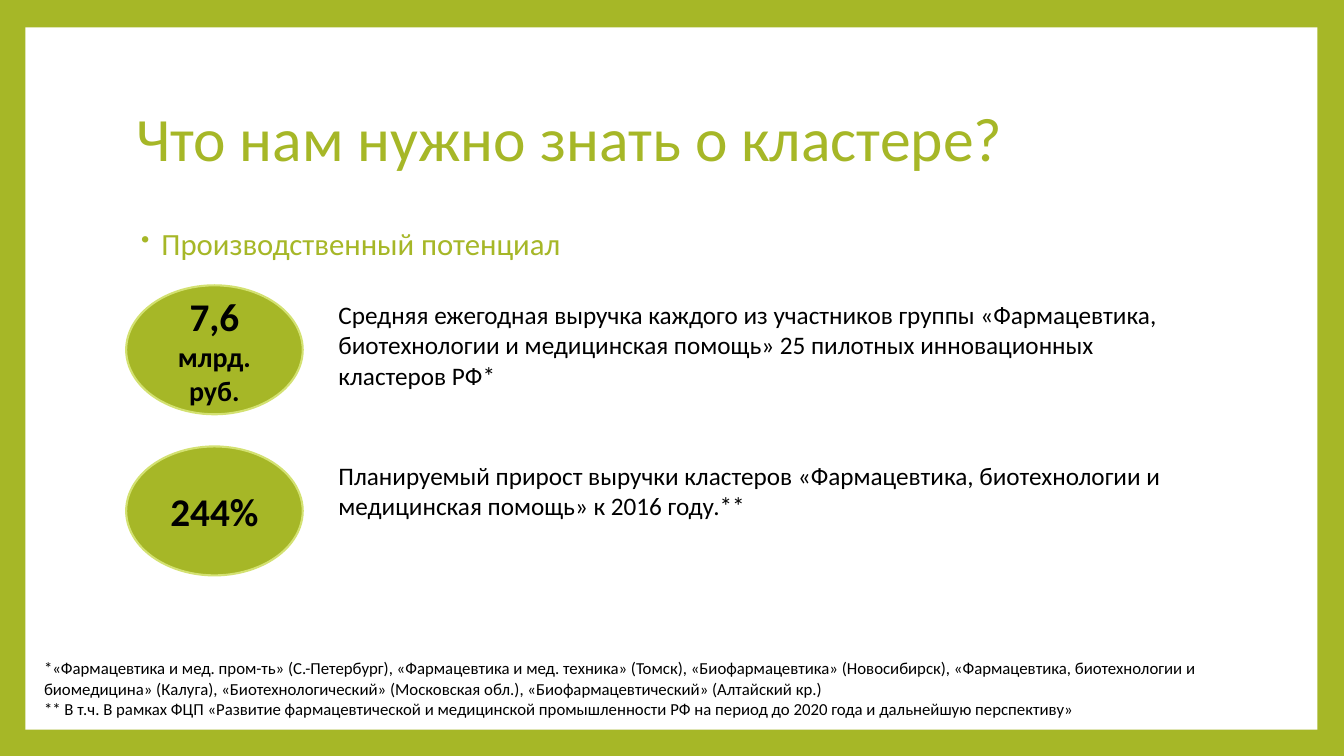
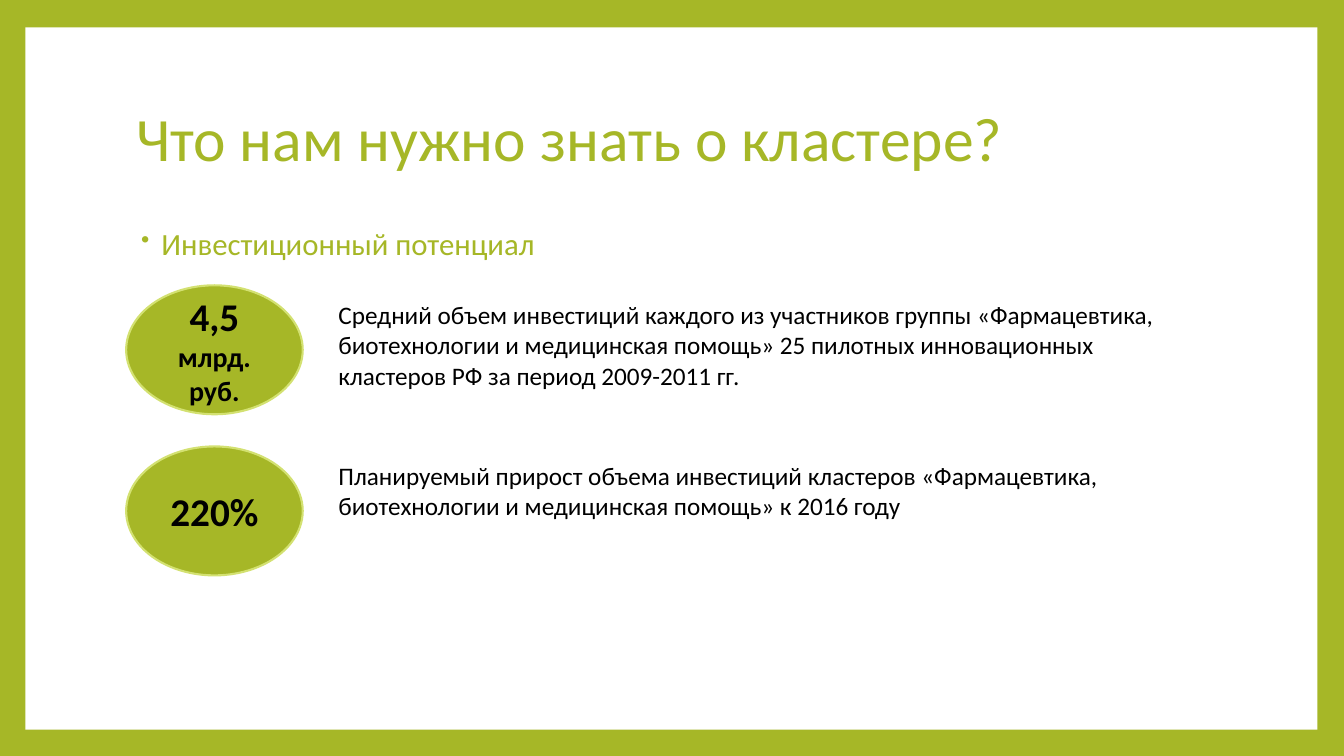
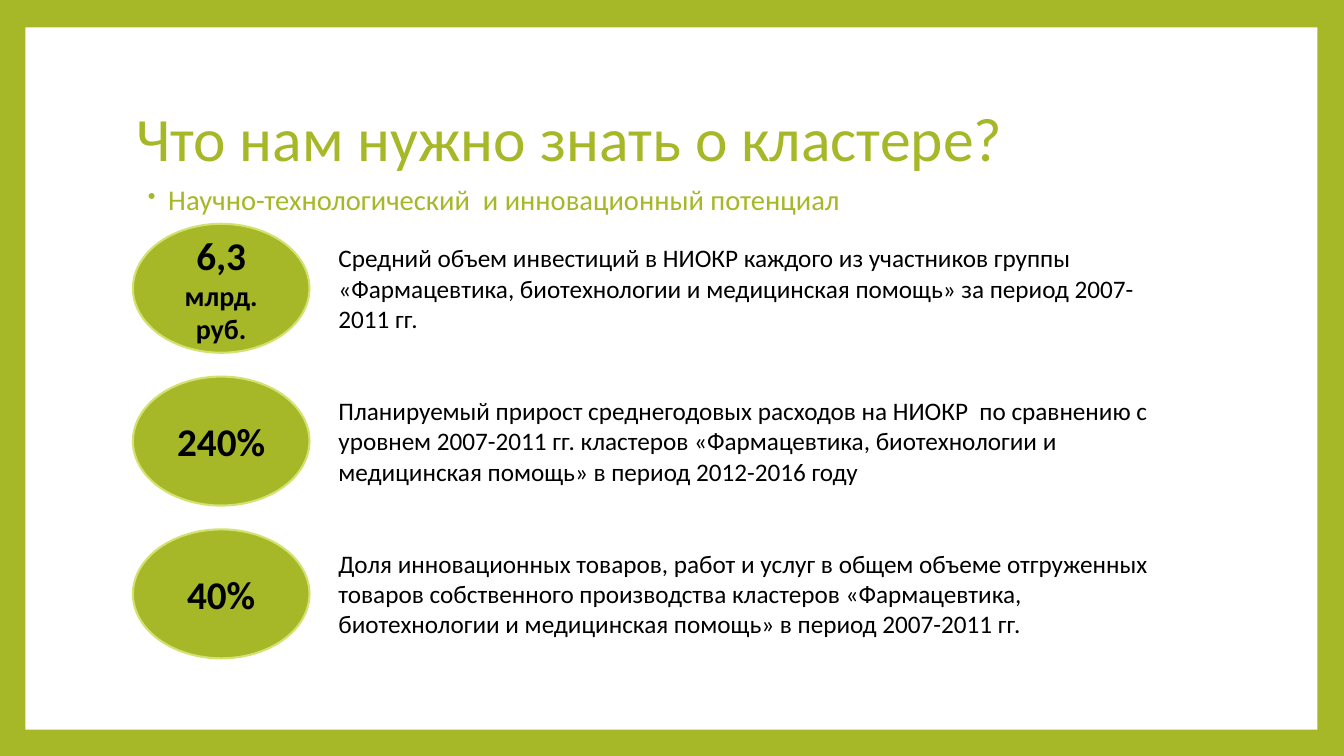
import pptx
import pptx.dml.color
import pptx.enum.shapes
import pptx.enum.text
import pptx.util
from lxml import etree
from pptx.oxml.ns import qn

Cm = pptx.util.Cm
Pt = pptx.util.Pt
ALIGN = pptx.enum.text.PP_ALIGN
ANCHOR = pptx.enum.text.MSO_ANCHOR
AUTO_SIZE = pptx.enum.text.MSO_AUTO_SIZE
SHAPE = pptx.enum.shapes.MSO_SHAPE

COLORS = {"green": "A6B727", "light_green": "D3E171", "white": "FFFFFF", "black": "000000"}
FONT = "Calibri"
TITLE = "Что нам нужно знать о кластере?"
BADGE_WIDTH, BADGE_HEIGHT = 4.45, 3.25
FACT_LEFT, FACT_WIDTH = 8.28, 21.62

SLIDES = [
    {
        "heading": "Производственный потенциал",
        "facts": [
            ([("7,6 ", 28), ("млрд. руб.", 20)],
             "Средняя ежегодная выручка каждого из участников группы «Фармацевтика, биотехнологии "
             "и медицинская помощь» 25 пилотных инновационных кластеров РФ*"),
            ([("244%", 28)],
             "Планируемый прирост выручки кластеров «Фармацевтика, биотехнологии и медицинская "
             "помощь» к 2016 году.**"),
        ],
        "footnotes": [
            "*«Фармацевтика и мед. пром-ть» (С.-Петербург), «Фармацевтика и мед. техника» (Томск), "
            "«Биофармацевтика» (Новосибирск), «Фармацевтика, биотехнологии и биомедицина» (Калуга), "
            "«Биотехнологический» (Московская обл.), «Биофармацевтический» (Алтайский кр.)",
            "** В т.ч. В рамках ФЦП «Развитие фармацевтической и медицинской промышленности РФ "
            "на период до 2020 года и дальнейшую перспективу»",
        ],
    },
    {
        "heading": "Инвестиционный потенциал",
        "facts": [
            ([("4,5 ", 28), ("млрд. руб.", 20)],
             "Средний объем инвестиций каждого из участников группы «Фармацевтика, биотехнологии "
             "и медицинская помощь» 25 пилотных инновационных кластеров РФ за период 2009-2011 гг."),
            ([("220%", 28)],
             "Планируемый прирост объема инвестиций кластеров «Фармацевтика, биотехнологии "
             "и медицинская помощь» к 2016 году"),
        ],
    },
    {
        "heading": "Научно-технологический  и инновационный потенциал",
        "heading_format": {"size": 20.4, "line_spacing": 0.9},
        "left": 3.35, "heading_top": 4.55, "facts_top": 5.64, "pitch": 3.85, "fact_offset": 0.35,
        "facts": [
            ([("6,3 ", 28), ("млрд. руб.", 20)],
             "Средний объем инвестиций в НИОКР каждого из участников группы «Фармацевтика, "
             "биотехнологии и медицинская помощь» за период 2007-2011 гг."),
            ([("240%", 28)],
             "Планируемый прирост среднегодовых расходов на НИОКР  по сравнению с уровнем "
             "2007-2011 гг. кластеров «Фармацевтика, биотехнологии и медицинская помощь» "
             "в период 2012-2016 году"),
            ([("40%", 28)],
             "Доля инновационных товаров, работ и услуг в общем объеме отгруженных товаров "
             "собственного производства кластеров «Фармацевтика, биотехнологии и медицинская "
             "помощь» в период 2007-2011 гг."),
        ],
    },
]


def rgb(name):
    """Return the named colour of the palette."""
    return pptx.dml.color.RGBColor.from_string(COLORS[name])


def write(frame, paragraphs, size=18, color="black", bold=False, align=ALIGN.LEFT,
          anchor=ANCHOR.TOP, line_spacing=None, grow=False):
    """Fill a text frame with paragraphs, each a string or a list of (text, size) runs."""
    frame.word_wrap = True
    frame.vertical_anchor = anchor
    frame.auto_size = AUTO_SIZE.SHAPE_TO_FIT_TEXT if grow else AUTO_SIZE.NONE
    for index, content in enumerate(paragraphs):
        paragraph = frame.add_paragraph() if index else frame.paragraphs[0]
        paragraph.alignment = align
        if line_spacing:
            paragraph.line_spacing = line_spacing
        runs = [(content, size)] if isinstance(content, str) else content
        for text, run_size in runs:
            run = paragraph.add_run()
            run.text = text
            run.font.name = FONT
            run.font.size = Pt(run_size)
            run.font.bold = bold
            run.font.color.rgb = rgb(color)


def add_text(slide, box, paragraphs, **text_format):
    """Add a text box at (left, top, width, height) in centimetres."""
    text_box = slide.shapes.add_textbox(*map(Cm, box))
    write(text_box.text_frame, paragraphs, **text_format)
    return text_box


def add_filled(slide, preset, box, fill, line=None):
    """Add a flat preset shape with an optional outline."""
    shape = slide.shapes.add_shape(preset, *map(Cm, box))
    shape.shadow.inherit = False
    shape.fill.solid()
    shape.fill.fore_color.rgb = rgb(fill)
    if line:
        shape.line.color.rgb = rgb(line)
        shape.line.width = Pt(1.5)
    else:
        shape.line.fill.background()
    return shape


def add_bullet(paragraph):
    """Give a paragraph a small green bullet with a hanging indent."""
    properties = paragraph._p.get_or_add_pPr()
    properties.set("marL", str(Cm(0.64)))
    properties.set("indent", str(Cm(-0.51)))
    bullet_color = etree.SubElement(properties, qn("a:buClr"))
    etree.SubElement(bullet_color, qn("a:srgbClr"), val=COLORS["green"])
    etree.SubElement(properties, qn("a:buSzPct"), val="80000")
    etree.SubElement(properties, qn("a:buChar"), char="•")


def add_base(presentation):
    """Add a slide with the green border, white panel and title."""
    slide = presentation.slides.add_slide(presentation.slide_layouts[6])
    slide.background.fill.solid()
    slide.background.fill.fore_color.rgb = rgb("green")
    add_filled(slide, SHAPE.RECTANGLE, (0.64, 0.69, 32.56, 17.7), "white")
    add_text(slide, (3.18, 1.7, 27.43, 3.76), [TITLE], size=44, color="green",
             anchor=ANCHOR.MIDDLE, line_spacing=0.9)
    return slide


def add_heading(slide, left, top, text, size=22, line_spacing=0.8):
    """Add the bulleted heading of the slide."""
    heading = add_text(slide, (left, top, 18.08, 1.09), [text], size=size, color="green",
                       line_spacing=line_spacing)
    paragraph = heading.text_frame.paragraphs[0]
    paragraph.space_before = Pt(14)
    add_bullet(paragraph)


def add_fact(slide, left, top, figure, description, offset):
    """Add a round badge with a figure and its description on the right."""
    badge = add_filled(slide, SHAPE.FLOWCHART_CONNECTOR, (left, top, BADGE_WIDTH, BADGE_HEIGHT),
                       "green", line="light_green")
    write(badge.text_frame, [figure], bold=True, align=ALIGN.CENTER, anchor=ANCHOR.MIDDLE)
    add_text(slide, (FACT_LEFT, top + offset, FACT_WIDTH, BADGE_HEIGHT - 2 * 0.35),
             [description], grow=True)


def add_potential(presentation, heading, facts, footnotes=(), heading_format=None, left=3.18,
                  heading_top=5.72, facts_top=7.19, pitch=4.06, fact_offset=0.23):
    """Add a slide on one kind of cluster potential."""
    slide = add_base(presentation)
    add_heading(slide, left, heading_top, heading, **(heading_format or {}))
    for row, (figure, description) in enumerate(facts):
        add_fact(slide, left, facts_top + row * pitch, figure, description, fact_offset)
    if footnotes:
        add_text(slide, (0.86, 16.46, 30.63, 1.8), footnotes, size=12, grow=True)


def main():
    """Build and save the presentation."""
    presentation = pptx.Presentation()
    presentation.slide_width = Cm(33.87)
    presentation.slide_height = Cm(19.05)
    for content in SLIDES:
        add_potential(presentation, **content)
    presentation.save("out.pptx")


if __name__ == "__main__":
    main()
